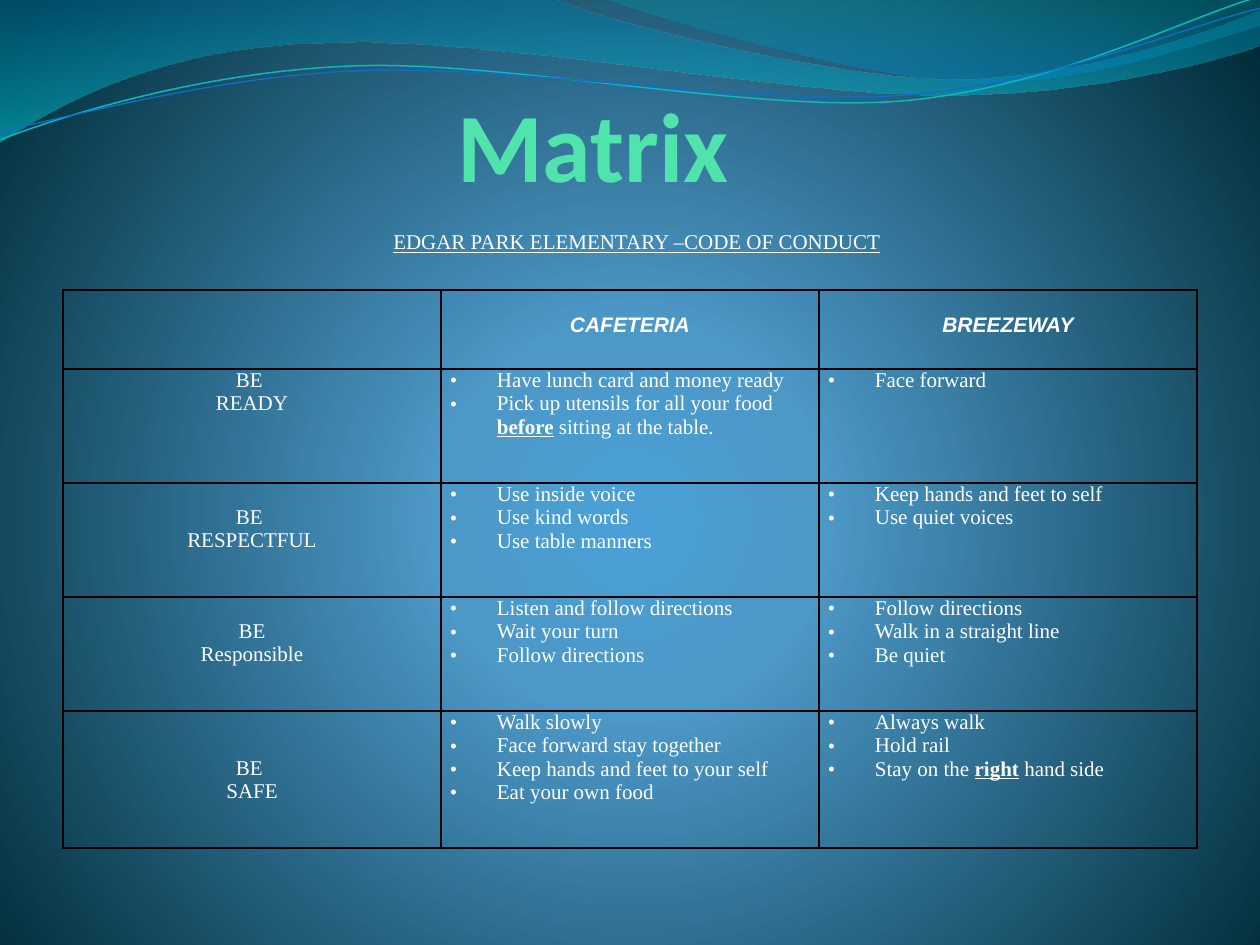
import lxml.etree
import pptx
import pptx.dml.color
import pptx.enum.text
import pptx.oxml
import pptx.oxml.ns
import pptx.util

EMU_PER_PX = 914400 / 126
THEME = {
    "text": "FFFFFF", "title": "50E3AC", "border": "000000",
    "title_size": 56, "text_size": 12,
    "title_font": "Calibri", "body_font": "Times New Roman", "header_font": "Arial",
    "background": [(0, "4AA0D6", 100), (25, "4C98C7", 100), (100, "002C38", 100)],
    "wide_wave": [(0, "0074A1", 45), (100, "00C6CF", 55)],
    "right_wave": [(0, "00A1A9", 30), (80, "008BBF", 45)],
    "upper_line": "0AB8BF", "lower_line": "0F6FC6",
}
qn = pptx.oxml.ns.qn
rgb = pptx.dml.color.RGBColor.from_string
centered = pptx.enum.text.PP_ALIGN.CENTER


def px(length):
    return pptx.util.Emu(round(length * EMU_PER_PX))


def set_gradient(fill, element, stops, direction):
    """Replace the default gradient by stops of (position, colour, opacity)."""
    fill.gradient()
    gradient = element.find(".//" + qn("a:gradFill"))
    for child in list(gradient):
        gradient.remove(child)
    stop_list = lxml.etree.SubElement(gradient, qn("a:gsLst"))
    for position, color, opacity in stops:
        stop = lxml.etree.SubElement(stop_list, qn("a:gs"), pos=str(position * 1000))
        color_element = lxml.etree.SubElement(stop, qn("a:srgbClr"), val=color)
        lxml.etree.SubElement(color_element, qn("a:alpha"), val=str(opacity * 1000))
    gradient.append(pptx.oxml.parse_xml(direction))


NAMESPACE = pptx.oxml.ns.nsdecls("a")
VERTICAL = f'<a:lin {NAMESPACE} ang="5400000" scaled="0"/>'
CIRCLE = (f'<a:path {NAMESPACE} path="circle">'
          '<a:fillToRect l="10000" t="110000" r="10000" b="100000"/></a:path>')

presentation = pptx.Presentation()
presentation.slide_width = px(1260)
presentation.slide_height = px(945)
slide = presentation.slides.add_slide(presentation.slide_layouts[5])
set_gradient(slide.background.fill, slide.element, THEME["background"], CIRCLE)

# Waves and lines at the top: a segment is one corner or the three points of a curve
waves = [
    ("wide_wave", None, (0, 0), [
        [(554, -1)], [(600, 21), (837, 79), (955, 79)], [(1075, 79), (1207, 33), (1260, 11)],
        [(1261, 45)], [(1239, 55), (1096, 96), (940, 95)], [(784, 95), (481, 35), (324, 43)],
        [(163, 45), (58, 105), (-1, 142)]]),
    ("right_wave", None, (604, -1), [
        [(641, 14), (859, 78), (969, 82)], [(1079, 87), (1211, 40), (1260, 26)], [(1260, 0)]]),
    ("upper_line", 0.85, (-2, 110), [
        [(58, 90), (199, 52), (350, 53)], [(499, 53), (745, 118), (896, 114)],
        [(1049, 109), (1184, 45), (1260, 27)]]),
    ("lower_line", 0.75, (-2, 101), [
        [(57, 94), (207, 57), (357, 58)], [(509, 58), (750, 112), (902, 108)],
        [(1052, 104), (1188, 52), (1262, 38)]]),
]
for name, line_width, start, segments in waves:
    anchors = [start] + [segment[-1] for segment in segments]
    corners = [(px(x), px(y)) for x, y in anchors]
    builder = slide.shapes.build_freeform(*corners[0])
    builder.add_line_segments(corners[1:], close=line_width is None)
    shape = builder.convert_to_shape()
    shape.shadow.inherit = False

    # Bend the straight segments that have control points
    left = min(x for x, _ in anchors)
    top = min(y for _, y in anchors)
    for line_to, segment in zip(list(shape.element.iter(qn("a:lnTo"))), segments):
        if len(segment) == 3:
            curve = lxml.etree.Element(qn("a:cubicBezTo"))
            for x, y in segment:
                lxml.etree.SubElement(curve, qn("a:pt"), x=str(px(x - left)), y=str(px(y - top)))
            line_to.getparent().replace(line_to, curve)

    if line_width is None:
        set_gradient(shape.fill, shape.element, THEME[name], VERTICAL)
        shape.line.fill.background()
    else:
        shape.rotation = 357.3
        shape.fill.background()
        shape.line.color.rgb = rgb(THEME[name])
        shape.line.width = pptx.util.Pt(line_width)

# Title
title = slide.shapes.title
title.left, title.top, title.width, title.height = px(399), px(57), px(410), px(145)
frame = title.text_frame
frame.margin_left = frame.margin_right = frame.margin_top = frame.margin_bottom = 0
frame.vertical_anchor = pptx.enum.text.MSO_ANCHOR.BOTTOM
frame.auto_size = pptx.enum.text.MSO_AUTO_SIZE.NONE
paragraph = frame.paragraphs[0]
paragraph.alignment = centered
run = paragraph.add_run()
run.text = "Matrix "
run.font.name = THEME["title_font"]
run.font.size = pptx.util.Pt(THEME["title_size"])
run.font.bold = True
run.font.color.rgb = rgb(THEME["title"])

# Subtitle
subtitle = slide.shapes.add_textbox(px(7), px(210), px(1260), px(63))
frame = subtitle.text_frame
frame.word_wrap = False
frame.vertical_anchor = pptx.enum.text.MSO_ANCHOR.MIDDLE
paragraph = frame.paragraphs[0]
paragraph.alignment = centered
run = paragraph.add_run()
run.text = "EDGAR PARK ELEMENTARY –CODE OF CONDUCT"
run.font.name = THEME["body_font"]
run.font.size = pptx.util.Pt(THEME["text_size"])
run.font.underline = True
run.font.color.rgb = rgb(THEME["text"])

# Conduct table: row height, lines left free above the label, cells; *...* is emphasis
rows = [
    (79, 1, [[], ["CAFETERIA"], ["BREEZEWAY"]]),
    (114, 0, [["BE ", "READY"],
              ["Have lunch card and money ready",
               "Pick up utensils for all your food *before* sitting at the table."],
              ["Face forward"]]),
    (114, 1, [["BE ", "RESPECTFUL"],
              ["Use inside voice", "Use kind words", "Use table manners"],
              ["Keep hands and feet to self", "Use quiet voices"]]),
    (114, 1, [["BE", "Responsible"],
              ["Listen and follow directions", "Wait your turn", "Follow directions"],
              ["Follow directions", "Walk in a straight line", "Be quiet"]]),
    (137, 2, [["BE ", "SAFE"],
              ["Walk slowly", "Face forward stay together",
               "Keep hands and feet to your self", "Eat your own food"],
              ["Always walk", "Hold rail", "Stay on the *right* hand side"]]),
]
LINE_HEIGHT = 23
table_height = sum(height for height, _, _ in rows)
table = slide.shapes.add_table(len(rows), 3, px(63), px(290), px(1134), px(table_height)).table
table.first_row = table.horz_banding = False
for column in table.columns:
    column.width = px(378)

for row_index, (height, free_lines, cells) in enumerate(rows):
    table.rows[row_index].height = px(height)
    for column_index, lines in enumerate(cells):
        is_header = row_index == 0
        is_list = not is_header and column_index > 0
        cell = table.cell(row_index, column_index)
        cell.margin_left = cell.margin_right = px(9)
        cell.margin_top = px(0 if is_list else free_lines * LINE_HEIGHT)
        cell.margin_bottom = 0
        cell.fill.background()
        properties = cell._tc.get_or_add_tcPr()
        for side_index, side in enumerate(("lnL", "lnR", "lnT", "lnB")):
            properties.insert(side_index, pptx.oxml.parse_xml(
                f'<a:{side} {NAMESPACE} w="12700"><a:solidFill>'
                f'<a:srgbClr val="{THEME["border"]}"/></a:solidFill></a:{side}>'))

        for line_index, line in enumerate(lines):
            frame = cell.text_frame
            paragraph = frame.add_paragraph() if line_index else frame.paragraphs[0]
            if is_list:
                paragraph_properties = paragraph._p.get_or_add_pPr()
                paragraph_properties.set("marL", str(px(47)))
                paragraph_properties.set("indent", str(-px(47)))
                lxml.etree.SubElement(paragraph_properties, qn("a:buFont"),
                                      typeface=THEME["body_font"])
                lxml.etree.SubElement(paragraph_properties, qn("a:buChar"), char="•")
            else:
                paragraph.alignment = centered
            for part_index, part in enumerate(line.split("*")):
                emphasized = part_index % 2 == 1
                run = paragraph.add_run()
                run.text = part
                run.font.name = THEME["header_font" if is_header else "body_font"]
                run.font.size = pptx.util.Pt(THEME["text_size"])
                run.font.bold = is_header or emphasized
                run.font.italic = is_header
                run.font.underline = emphasized
                run.font.color.rgb = rgb(THEME["text"])

presentation.save("out.pptx")
